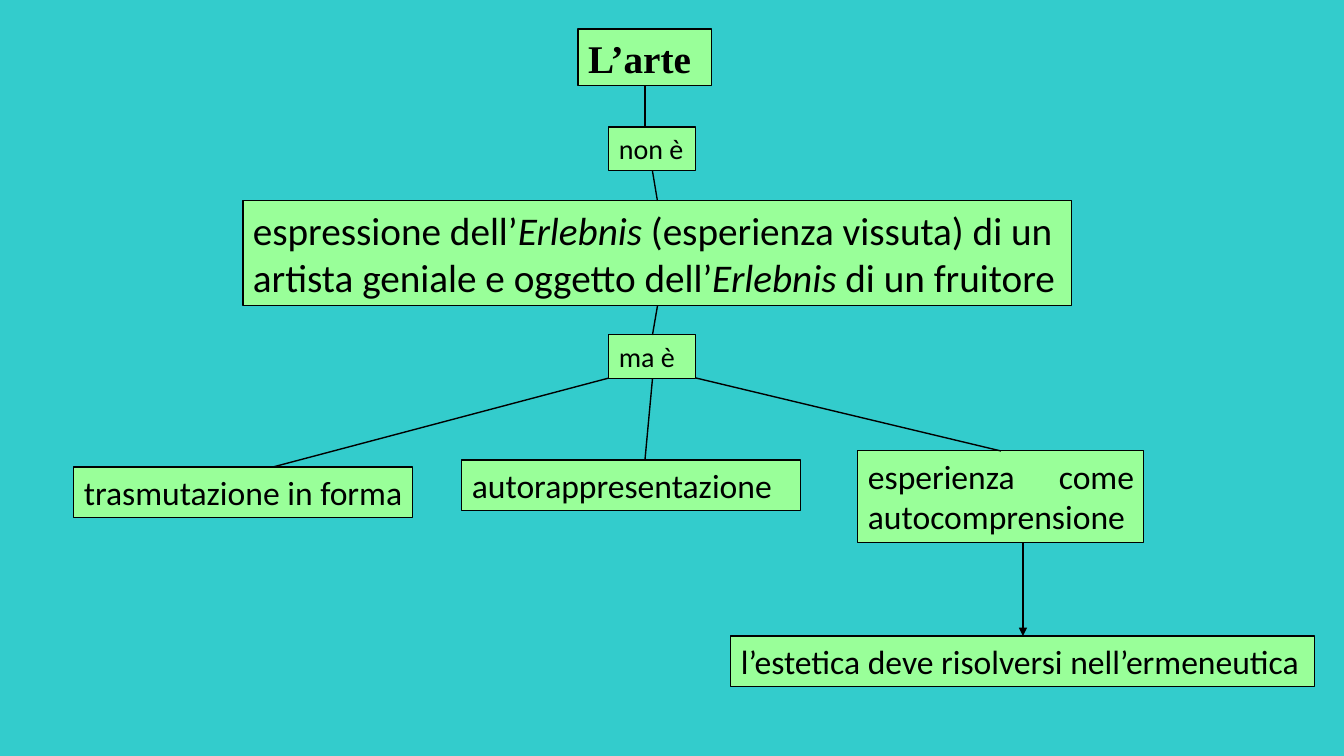
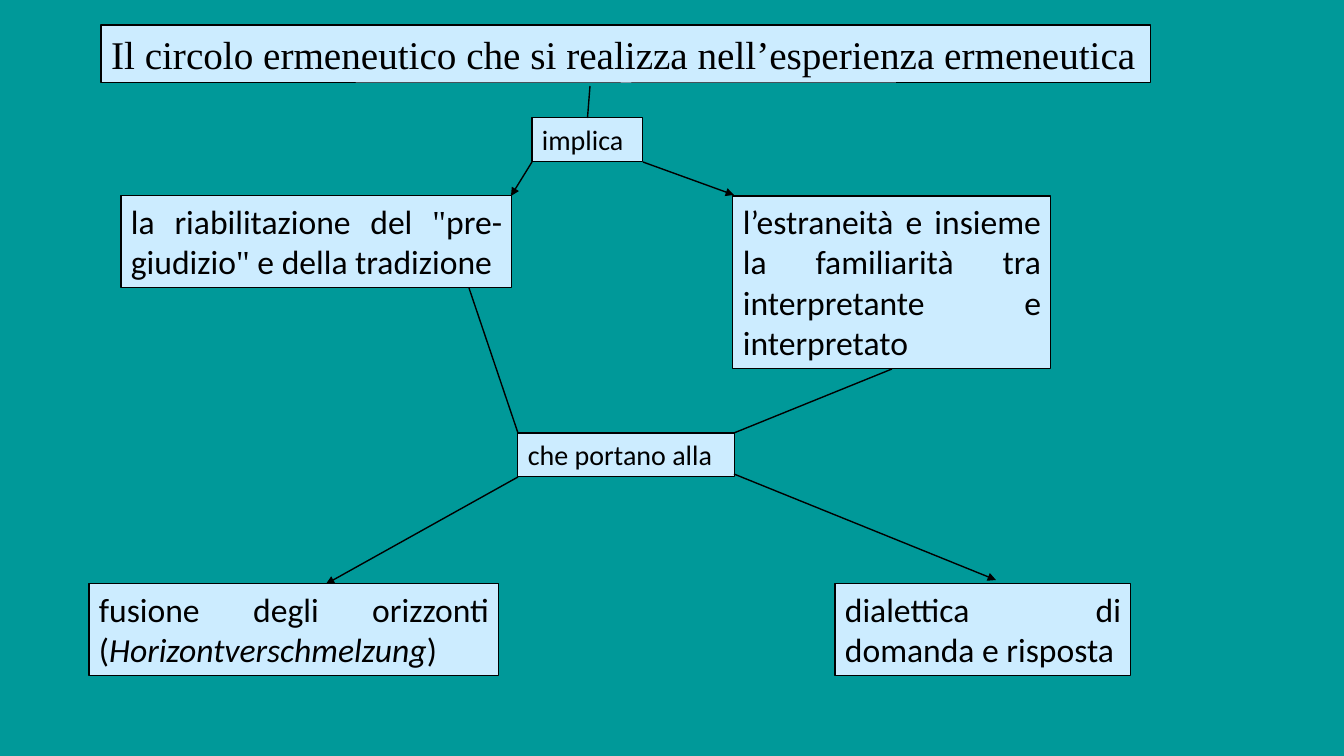
from dataclasses import dataclass
from lxml import etree
from pptx import Presentation
from pptx import util as u
from pptx.dml.color import RGBColor
from pptx.enum import shapes, text
from pptx.oxml.ns import qn

TOP, FOOT = 0, 2  # connection sites of a rectangle
LEFT, JUST = text.PP_ALIGN.LEFT, text.PP_ALIGN.JUSTIFY
FIXED, GROW = text.MSO_AUTO_SIZE.NONE, text.MSO_AUTO_SIZE.SHAPE_TO_FIT_TEXT


@dataclass(frozen=True)
class Theme:
    ink: str = "000000"
    sans: str = "Calibri"
    serif: str = "Times New Roman"
    large: int = 28
    mid: int = 24
    small: int = 20
    edge: float = 0.75
    rule: float = 1


def px(n):
    return u.Emu(round(n * 914400 / 100.8))


def hue(code):
    return RGBColor.from_string(code)


def ital(words):
    return words, {"italic": True}


class Deck:
    def __init__(self, theme):
        self.theme = theme
        self.prs = Presentation()
        self.prs.slide_width, self.prs.slide_height = px(1344), px(756)

    def page(self, back, fill):
        self.slide = self.prs.slides.add_slide(self.prs.slide_layouts[5])
        self.fill = fill
        ground = self.slide.background.fill
        ground.solid()
        ground.fore_color.rgb = hue(back)

    def dress(self, shape, runs, size, align, fit=GROW, **base):
        """Give a box its fill, edge and text; a run is a string or (string, font settings)."""
        shape.fill.solid()
        shape.fill.fore_color.rgb = hue(self.fill)
        shape.line.color.rgb = hue(self.theme.ink)
        shape.line.width = u.Pt(self.theme.edge)
        frame = shape.text_frame
        frame.word_wrap = True
        frame.auto_size = fit
        frame.vertical_anchor = text.MSO_ANCHOR.TOP
        par = frame.paragraphs[0]
        par.alignment = align
        for item in runs:
            words, extra = (item, {}) if isinstance(item, str) else item
            run = par.add_run()
            run.text = words
            run.font.size = u.Pt(size)
            run.font.color.rgb = hue(self.theme.ink)
            for key, value in {"name": self.theme.sans, **base, **extra}.items():
                setattr(run.font, key, value)
        return shape

    def title(self, area, words, bold=False):
        head = self.slide.shapes.title
        head.left, head.top, head.width, head.height = map(px, area)
        return self.dress(head, [words], self.theme.large, LEFT, FIXED,
                          name=self.theme.serif, bold=bold)

    def box(self, area, *runs, size=None, align=JUST):
        shape = self.slide.shapes.add_textbox(*map(px, area))
        return self.dress(shape, runs, size or self.theme.mid, align)

    def label(self, area, words):
        return self.box(area, words, size=self.theme.small, align=LEFT)

    def link(self, start, end, tip=False):
        """Join two ends, each a point (x, y) or a (shape, site) to attach to."""
        ends = [e if isinstance(e[0], int) else (0, 0) for e in (start, end)]
        line = self.slide.shapes.add_connector(
            shapes.MSO_CONNECTOR.STRAIGHT, *map(px, ends[0] + ends[1]))
        for e, attach in ((start, line.begin_connect), (end, line.end_connect)):
            if not isinstance(e[0], int):
                attach(*e)
        line.line.color.rgb = hue(self.theme.ink)
        line.line.width = u.Pt(self.theme.rule)
        if tip:
            etree.SubElement(line.line._get_or_add_ln(), qn("a:tailEnd"), type="triangle")
        etree.SubElement(line._element.spPr, qn("a:effectLst"))


def art(deck):
    deck.page("33CCCC", "99FF99")
    head = deck.title((578, 29, 134, 57), "L’arte", bold=True)
    nay = deck.label((609, 127, 87, 44), "non è")
    claim = deck.box((243, 201, 829, 105), "espressione dell’", ital("Erlebnis"),
                     " (esperienza vissuta) di un artista geniale e oggetto dell’",
                     ital("Erlebnis"), " di un fruitore",
                     size=deck.theme.large, align=LEFT)
    but = deck.label((609, 335, 87, 44), "ma è")
    deck.box((462, 460, 339, 51), "autorappresentazione", align=LEFT)
    deck.box((858, 451, 286, 92), "esperienza come autocomprensione")
    deck.box((74, 467, 339, 51), "trasmutazione in forma")
    end = deck.box((731, 636, 584, 51), "l’estetica deve risolversi nell’ermeneutica")
    deck.link((head, FOOT), (645, 127))
    deck.link((nay, FOOT), (claim, TOP))
    deck.link((claim, FOOT), (but, TOP))
    deck.link((609, 378), (273, 467))
    deck.link((but, FOOT), (645, 460))
    deck.link((696, 378), (1001, 451))
    deck.link((1023, 543), (end, TOP), tip=True)


def circle(deck):
    deck.page("009999", "CCECFF")
    quote = ('"', {"name": deck.theme.serif})
    deck.title((101, 25, 1050, 58),
               "Il circolo ermeneutico che si realizza nell’esperienza ermeneutica")
    verb = deck.label((532, 118, 111, 44), "implica")
    deck.box((121, 196, 391, 92), "la riabilitazione del ", quote, "pre-giudizio",
             quote, " e della tradizione")
    far = deck.box((733, 196, 318, 173),
                   "l’estraneità e insieme la familiarità tra interpretante e interpretato")
    deck.label((518, 433, 217, 44), "che portano alla")
    deck.box((89, 584, 410, 92), "fusione degli orizzonti (",
             ital("Horizontverschmelzung"), ")")
    deck.box((835, 584, 296, 92), "dialettica di domanda e risposta")
    deck.link((590, 86), (verb, TOP))
    deck.link((532, 162), (511, 196), tip=True)
    deck.link((643, 162), (734, 195), tip=True)
    deck.link((469, 288), (518, 433))
    deck.link((far, FOOT), (734, 433))
    deck.link((518, 477), (326, 584), tip=True)
    deck.link((734, 474), (996, 580), tip=True)


def main():
    deck = Deck(Theme())
    art(deck)
    circle(deck)
    deck.prs.save("out.pptx")


if __name__ == "__main__":
    main()
